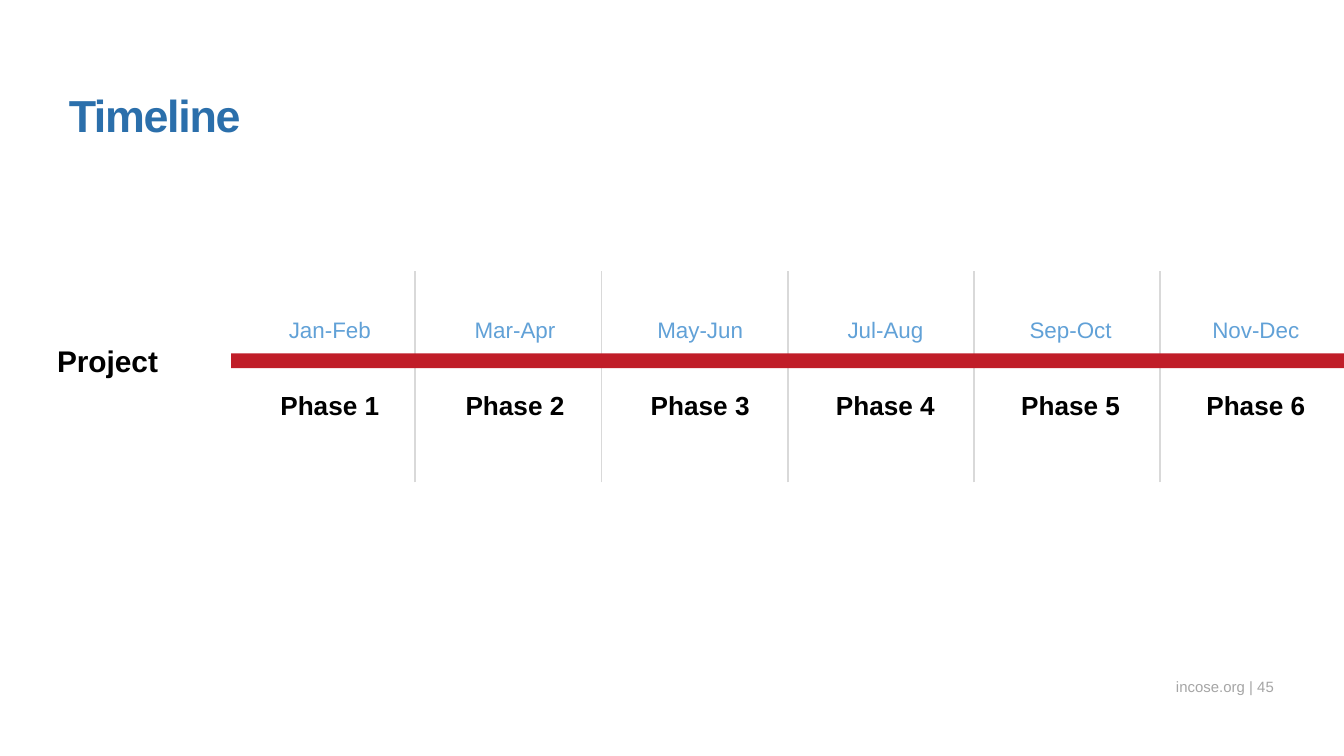
from lxml import etree
from pptx import Presentation
from pptx.dml.color import RGBColor
from pptx.enum.shapes import MSO_CONNECTOR, MSO_SHAPE
from pptx.enum.text import MSO_ANCHOR, MSO_AUTO_SIZE, PP_ALIGN
from pptx.oxml.ns import qn
from pptx.util import Cm, Pt

LEFT, CENTER, RIGHT = PP_ALIGN.LEFT, PP_ALIGN.CENTER, PP_ALIGN.RIGHT
TOP, BOTTOM = MSO_ANCHOR.TOP, MSO_ANCHOR.BOTTOM
NO_FIT = MSO_AUTO_SIZE.NONE
RECTANGLE, STRAIGHT = MSO_SHAPE.RECTANGLE, MSO_CONNECTOR.STRAIGHT

# Content
TITLE = "Timeline"
ROW_NAME = "Project"
PERIODS = [
    ("Jan-Feb", "Phase 1"),
    ("Mar-Apr", "Phase 2"),
    ("May-Jun", "Phase 3"),
    ("Jul-Aug", "Phase 4"),
    ("Sep-Oct", "Phase 5"),
    ("Nov-Dec", "Phase 6"),
]
FOOTER = "incose.org | 45"

# Colours
BLUE, LIGHT_BLUE, RED = "2B6FAB", "61A1D7", "C01D28"
BLACK, GRAY, LIGHT_GRAY = "000000", "A5A5A5", "D9D9D9"

# Layout in centimetres
LABEL_X, LABEL_STEP = 5.11, 3.5
LABEL_W, LABEL_H = 2.13, 0.74
DATE_Y, PHASE_Y = 5.84, 7.23
DIVIDER_X, DIVIDER_STEP = 7.85, 3.52
DIVIDER_TOP, DIVIDER_BOTTOM = 5.13, 9.12
LABEL_INSETS = (0.25, 0.13, 0.13, 0.13)


def rgb(color):
    return RGBColor.from_string(color)


def write(sp, text, size, color, bold=False, align=CENTER, anchor=TOP,
          insets=(0, 0, 0, 0), wrap=True):
    tf = sp.text_frame
    tf.auto_size, tf.word_wrap, tf.vertical_anchor = NO_FIT, wrap, anchor
    tf.margin_left, tf.margin_top, tf.margin_right, tf.margin_bottom = map(Cm, insets)
    p = tf.paragraphs[0]
    p.alignment = align
    r = p.add_run()
    r.text = text
    r.font.name, r.font.size, r.font.bold = "Arial", Pt(size), bold
    r.font.color.rgb = rgb(color)
    return r


def add_label(x, y, text, size, color, bold=False):
    sp = s.shapes.add_textbox(Cm(x), Cm(y), Cm(LABEL_W), Cm(LABEL_H))
    write(sp, text, size, color, bold, insets=LABEL_INSETS, wrap=False)


prs = Presentation()
prs.slide_width, prs.slide_height = Cm(25.4), Cm(14.29)
s = prs.slides.add_slide(prs.slide_layouts[5])

# Title
title = s.shapes.title
title.left, title.top, title.width, title.height = Cm(1.3), Cm(1.65), Cm(22.83), Cm(1.02)
r = write(title, TITLE, 24, BLUE, bold=True, align=LEFT, anchor=BOTTOM)
r.font._element.set("spc", "-70")

# Dividers between periods
for i in range(len(PERIODS) - 1):
    x = Cm(DIVIDER_X + i * DIVIDER_STEP)
    line = s.shapes.add_connector(STRAIGHT, x, Cm(DIVIDER_BOTTOM), x, Cm(DIVIDER_TOP))
    line.line.color.rgb = rgb(LIGHT_GRAY)
    line.line.width = Pt(1)
    etree.SubElement(line._element.spPr, qn("a:effectLst"))

# Timeline bar, running to the right edge
bar = s.shapes.add_shape(RECTANGLE, Cm(4.37), Cm(6.68), Cm(21.03), Cm(0.28))
bar.shadow.inherit = False
bar.fill.solid()
bar.fill.fore_color.rgb = rgb(RED)
bar.line.fill.background()

# Dates above the bar, phases below
for i, (date, phase) in enumerate(PERIODS):
    x = LABEL_X + i * LABEL_STEP
    add_label(x, DATE_Y, date, 12, LIGHT_BLUE)
    add_label(x, PHASE_Y, phase, 14, BLACK, bold=True)
add_label(0.91, 6.35, ROW_NAME, 16, BLACK, bold=True)

# Footer
footer = s.shapes.add_textbox(Cm(21.29), Cm(12.67), Cm(2.87), Cm(0.48))
write(footer, FOOTER, 8, GRAY, align=RIGHT, anchor=BOTTOM, insets=(0, 0, 0.08, 0))

prs.save("out.pptx")
